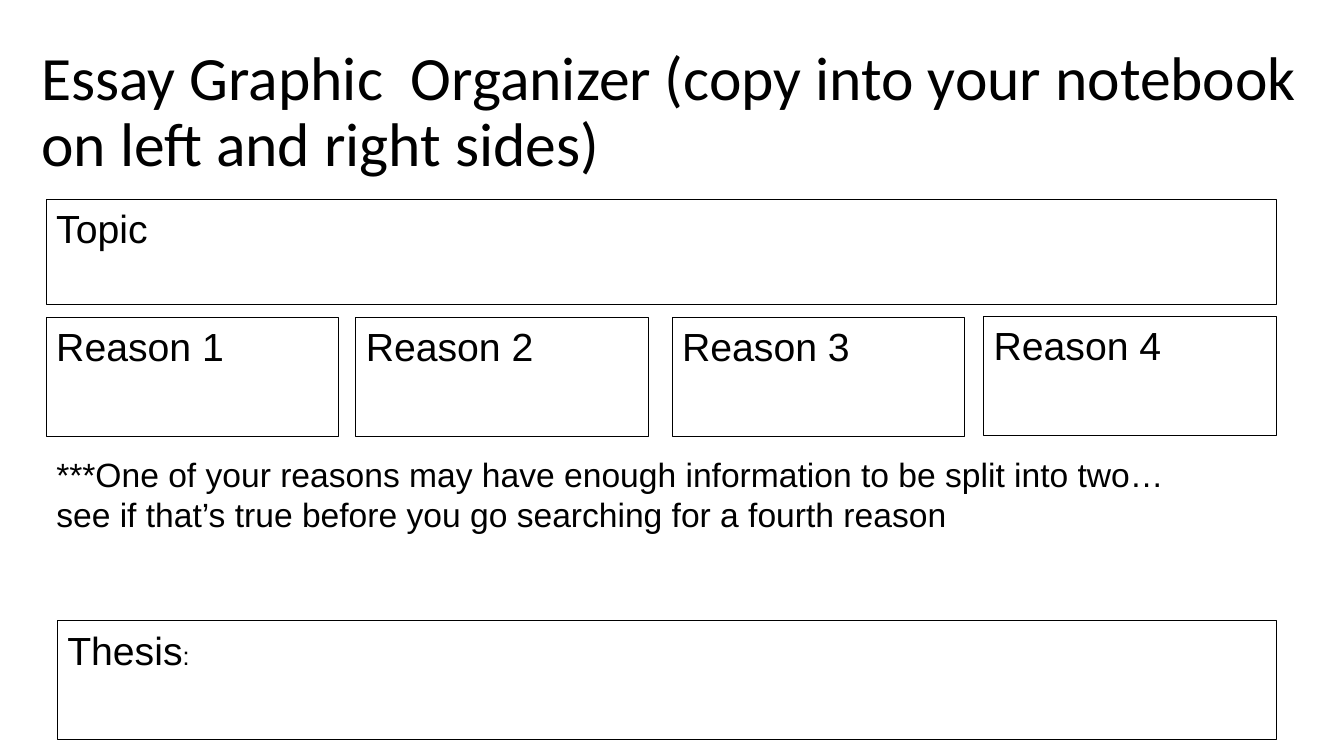
from dataclasses import dataclass

from pptx import Presentation
from pptx.dml.color import RGBColor
from pptx.enum.shapes import MSO_SHAPE
from pptx.enum.text import MSO_ANCHOR as Anchor, MSO_AUTO_SIZE as AutoSize, PP_ALIGN as Align
from pptx.util import Pt


@dataclass(frozen=True)
class Theme:
    ink: RGBColor = RGBColor(0, 0, 0)
    paper: RGBColor = RGBColor(255, 255, 255)
    heading_font: str = "Calibri"
    body_font: str = "Arial"
    title_size: float = 44
    label_size: float = 28
    note_size: float = 24
    colon_size: float = 18
    border: float = 0.75


@dataclass(frozen=True)
class Area:
    left: float
    top: float
    width: float
    height: float

    def points(self) -> tuple:
        return Pt(self.left), Pt(self.top), Pt(self.width), Pt(self.height)


@dataclass(frozen=True)
class Piece:
    text: str
    size: float


@dataclass(frozen=True)
class AnswerBox:
    area: Area
    pieces: tuple


THEME = Theme()
MARGIN = 33.1
RIGHT_EDGE = 911.5
REASON_WIDTH, REASON_HEIGHT = 208.8, 85
REASON_CORNERS = ((MARGIN, 226.8), (254.2, 226.8), (480.2, 226.8), (702.7, 226.1))
THESIS_LEFT = 41

TITLE_AREA = Area(22.3, 28.8, 915.1, 104.4)
TITLE = "Essay Graphic  Organizer (copy into your notebook on left and right sides)"
NOTE_AREA = Area(MARGIN, 320.4, 807.1, 108.7)
NOTE = ("***One of your reasons may have enough information to be split into two…"
        "see if that’s true before you go searching for a fourth reason")

TOPIC = AnswerBox(Area(MARGIN, 142.6, RIGHT_EDGE - MARGIN, 74.9),
                  (Piece("Topic", THEME.label_size),))
REASONS = [
    AnswerBox(Area(left, top, REASON_WIDTH, REASON_HEIGHT),
              (Piece(f"Reason {number}", THEME.label_size),))
    for number, (left, top) in enumerate(REASON_CORNERS, start=1)
]
THESIS = AnswerBox(Area(THESIS_LEFT, 443.5, RIGHT_EDGE - THESIS_LEFT, REASON_HEIGHT),
                   (Piece("Thesis", THEME.label_size), Piece(":", THEME.colon_size)))


def write(shape, pieces: tuple, font: str, anchor: Anchor = Anchor.TOP,
          line_spacing: float = 1.0) -> None:
    frame = shape.text_frame
    paragraph = frame.paragraphs[0]
    frame_format = {"word_wrap": True, "auto_size": AutoSize.NONE, "vertical_anchor": anchor}
    paragraph_format = {"alignment": Align.LEFT, "line_spacing": line_spacing}
    for target, values in ((frame, frame_format), (paragraph, paragraph_format)):
        for attribute, value in values.items():
            setattr(target, attribute, value)
    for piece in pieces:
        run = paragraph.add_run()
        run.text = piece.text
        for attribute, value in {"name": font, "size": Pt(piece.size)}.items():
            setattr(run.font, attribute, value)
        run.font.color.rgb = THEME.ink


def add_title(slide) -> None:
    title = slide.shapes.title
    title.left, title.top, title.width, title.height = TITLE_AREA.points()
    write(title, (Piece(TITLE, THEME.title_size),), THEME.heading_font, Anchor.MIDDLE, 0.9)


def add_answer_box(slide, box: AnswerBox) -> None:
    shape = slide.shapes.add_shape(MSO_SHAPE.RECTANGLE, *box.area.points())
    shape.shadow.inherit = False
    shape.fill.background()
    shape.line.color.rgb = THEME.ink
    shape.line.width = Pt(THEME.border)
    write(shape, box.pieces, THEME.body_font)


def add_note(slide) -> None:
    note = slide.shapes.add_textbox(*NOTE_AREA.points())
    write(note, (Piece(NOTE, THEME.note_size),), THEME.body_font)


def main() -> None:
    presentation = Presentation()
    presentation.slide_width, presentation.slide_height = Pt(960), Pt(540)
    slide = presentation.slides.add_slide(presentation.slide_layouts[5])
    slide.background.fill.solid()
    slide.background.fill.fore_color.rgb = THEME.paper
    add_title(slide)
    for box in (TOPIC, *REASONS, THESIS):
        add_answer_box(slide, box)
    add_note(slide)
    presentation.save("out.pptx")


if __name__ == "__main__":
    main()
